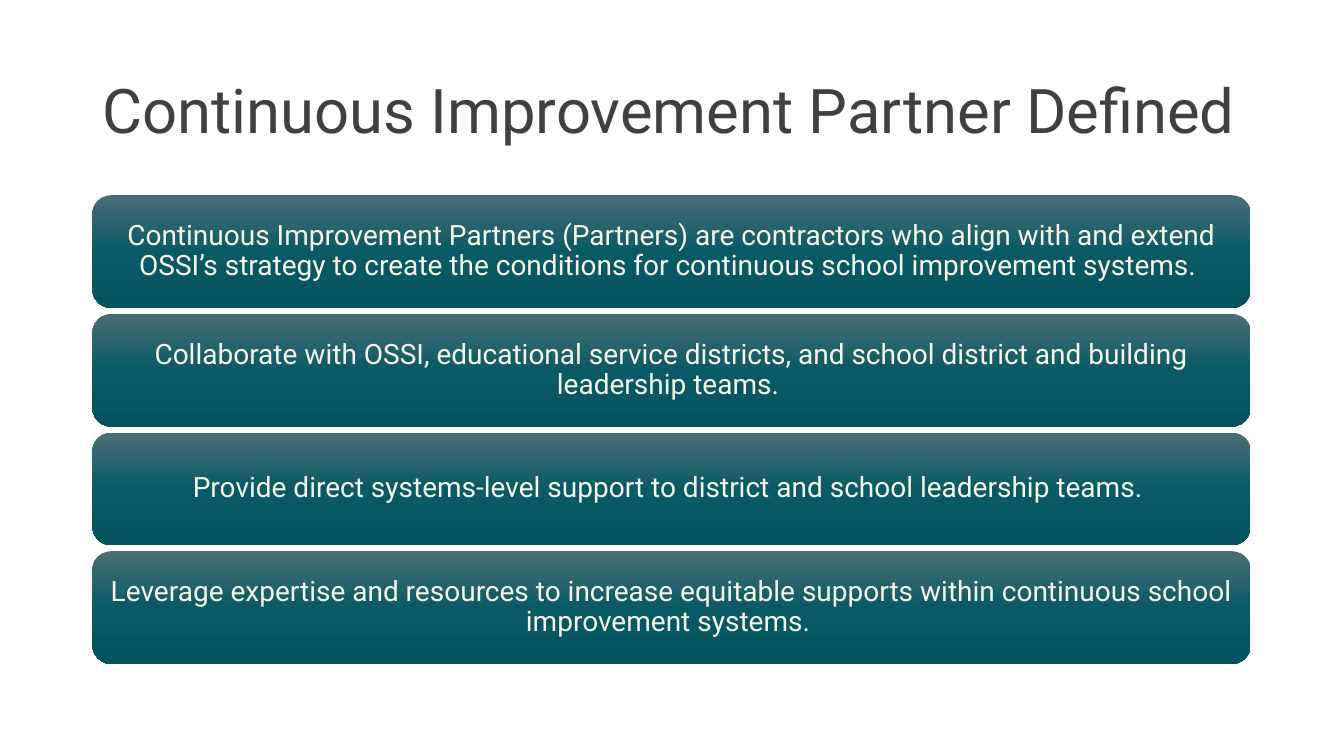
from copy import deepcopy

from pptx import Presentation
from pptx.dml.color import RGBColor
from pptx.enum.shapes import MSO_SHAPE
from pptx.enum.text import MSO_ANCHOR, PP_ALIGN
from pptx.util import Cm, Pt

ROUNDED = MSO_SHAPE.ROUNDED_RECTANGLE
MIDDLE = MSO_ANCHOR.MIDDLE
LEFT, CENTER = PP_ALIGN.LEFT, PP_ALIGN.CENTER

FONT = "Roboto"
TITLE_COLOR = "40403D"
BAR_TEXT_COLOR = "F7F5EB"
BAR_GRADIENT = [(0, "4B6E76"), (0.5, "095A65"), (1, "04535E")]

# Each statement ends in a space, which takes part in the centring
STATEMENTS = [
    "Continuous Improvement Partners (Partners) are contractors who align with and extend "
    "OSSI’s strategy to create the conditions for continuous school improvement systems. ",
    "Collaborate with OSSI, educational service districts, and school district and building "
    "leadership teams. ",
    "Provide direct systems-level support to district and school leadership teams. ",
    "Leverage expertise and resources to increase equitable supports within continuous school "
    "improvement systems. ",
]

MARGIN_LEFT = 2.33
BAR_TOP, BAR_WIDTH, BAR_HEIGHT, BAR_PITCH = 4.92, 29.19, 2.84, 2.99


def color(value):
    return RGBColor.from_string(value)


def write_text(shape, text, size, text_color, alignment):
    frame = shape.text_frame
    frame.word_wrap = True
    frame.vertical_anchor = MIDDLE
    paragraph = frame.paragraphs[0]
    paragraph.text = text
    paragraph.alignment = alignment
    paragraph.line_spacing = 0.9
    paragraph.font.name = FONT
    paragraph.font.size = Pt(size)
    paragraph.font.color.rgb = color(text_color)


def fill_gradient(shape, stops):
    """Vertical gradient; the default two stops are extended to the number needed."""
    fill = shape.fill
    fill.gradient()
    fill.gradient_angle = 270
    stop_list = shape._element.spPr.gradFill.gsLst
    while len(stop_list) < len(stops):
        stop_list.append(deepcopy(stop_list[-1]))
    for stop, (position, value) in zip(fill.gradient_stops, stops):
        stop.position = position
        stop.color.rgb = color(value)


def add_title(slide, text):
    box = slide.shapes.add_textbox(Cm(MARGIN_LEFT), Cm(1.02), Cm(29.21), Cm(3.68))
    write_text(box, text, 44, TITLE_COLOR, LEFT)


def add_bar(slide, top, text):
    bar = slide.shapes.add_shape(
        ROUNDED, Cm(MARGIN_LEFT), Cm(top), Cm(BAR_WIDTH), Cm(BAR_HEIGHT))
    bar.shadow.inherit = False
    bar.line.fill.background()
    fill_gradient(bar, BAR_GRADIENT)
    frame = bar.text_frame
    frame.margin_left = frame.margin_right = Cm(0.21)
    frame.margin_top = frame.margin_bottom = Cm(0.11)
    write_text(bar, text, 20, BAR_TEXT_COLOR, CENTER)


def main():
    presentation = Presentation()
    presentation.slide_width = Cm(33.87)
    presentation.slide_height = Cm(19.05)
    slide = presentation.slides.add_slide(presentation.slide_layouts[6])

    # Heading
    add_title(slide, "Continuous Improvement Partner Defined")

    # Stacked statement bars
    for index, statement in enumerate(STATEMENTS):
        add_bar(slide, BAR_TOP + index * BAR_PITCH, statement)

    presentation.save("out.pptx")


if __name__ == "__main__":
    main()
